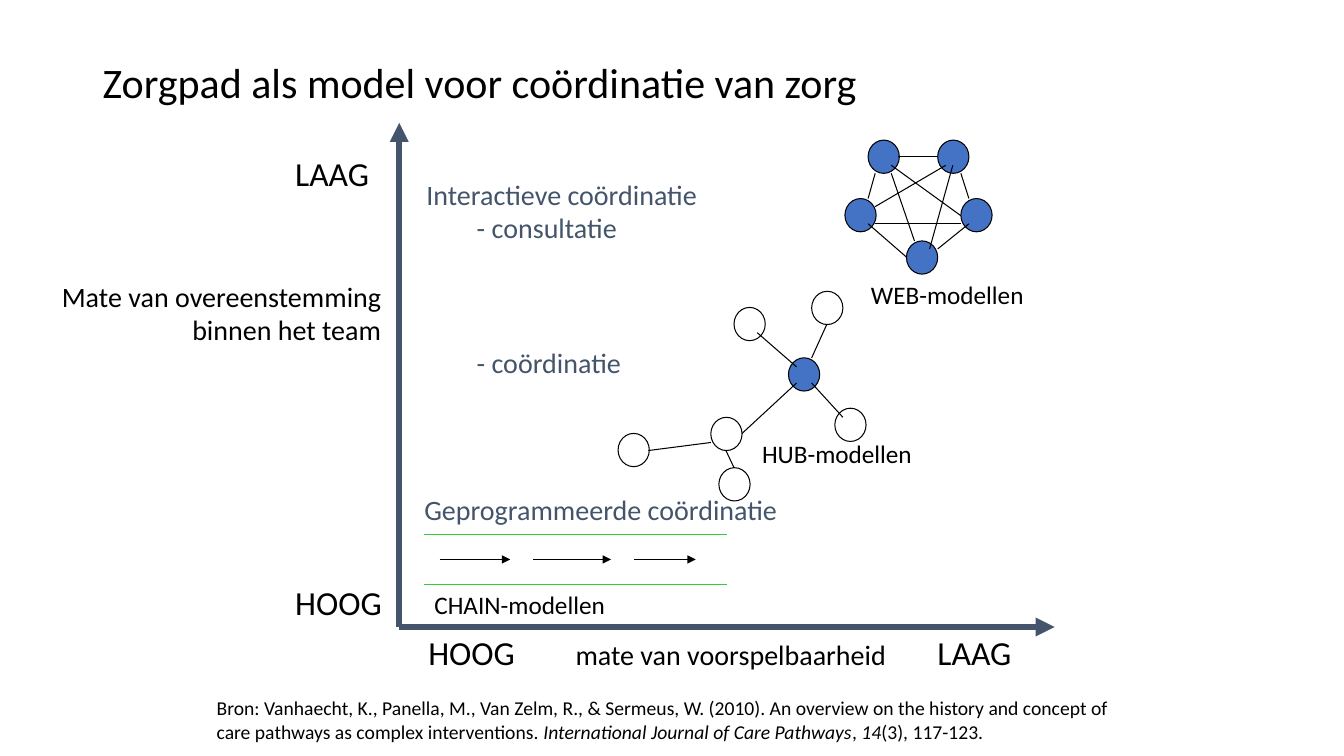
from lxml import etree
from pptx import Presentation
from pptx.dml.color import RGBColor
from pptx.enum.shapes import MSO_CONNECTOR, MSO_SHAPE
from pptx.enum.text import MSO_ANCHOR, MSO_AUTO_SIZE, PP_ALIGN
from pptx.oxml.ns import qn
from pptx.util import Inches, Pt

STRAIGHT = MSO_CONNECTOR.STRAIGHT
OVAL = MSO_SHAPE.OVAL
MIDDLE = MSO_ANCHOR.MIDDLE
FIT = MSO_AUTO_SIZE.SHAPE_TO_FIT_TEXT
LEFT, RIGHT = PP_ALIGN.LEFT, PP_ALIGN.RIGHT

BLACK = RGBColor(0x00, 0x00, 0x00)
SLATE = RGBColor(0x44, 0x54, 0x6A)
BLUE = RGBColor(0x44, 0x72, 0xC4)
GREEN = RGBColor(0x33, 0xCC, 0x33)


class Deck:
    """Style and current slide."""

    font = "Calibri"
    thin = 0.75
    node_w, node_h = 0.31, 0.33

    def __init__(self):
        self.prs = Presentation()
        self.prs.slide_width = Inches(13.33)
        self.prs.slide_height = Inches(7.5)
        self.s = self.prs.slides.add_slide(self.prs.slide_layouts[6])

    def style(self, r, size, color=BLACK, italic=None):
        r.font.name = self.font
        r.font.size = Pt(size)
        r.font.color.rgb = color
        r.font.italic = italic

    def box(self, x, y, w, h, wrap=False):
        sp = self.s.shapes.add_textbox(Inches(x), Inches(y), Inches(w), Inches(h))
        tf = sp.text_frame
        tf.word_wrap = wrap
        tf.auto_size = FIT
        return tf

    def text(self, x, y, w, h, text, size, color=BLACK, align=LEFT, wrap=False):
        tf = self.box(x, y, w, h, wrap)
        tf.text = text
        for p in tf.paragraphs:
            p.alignment = align
            for r in p.runs:
                self.style(r, size, color)
        return tf

    def rich(self, x, y, w, h, runs):
        """One wrapped paragraph of (text, size, italic) runs."""
        p = self.box(x, y, w, h, wrap=True).paragraphs[0]
        for text, size, italic in runs:
            r = p.add_run()
            r.text = text
            self.style(r, size, italic=italic)
        return p

    def tab_stops(self, p, *stops):
        tabs = etree.SubElement(p._p.get_or_add_pPr(), qn("a:tabLst"))
        for pos in stops:
            etree.SubElement(tabs, qn("a:tab"), pos=str(Inches(pos)), algn="l")

    def line(self, x1, y1, x2, y2, color=BLACK, width=thin, arrow=False):
        c = self.s.shapes.add_connector(
            STRAIGHT, Inches(x1), Inches(y1), Inches(x2), Inches(y2))
        c.line.color.rgb = color
        c.line.width = Pt(width)
        if arrow:
            etree.SubElement(c.line._get_or_add_ln(), qn("a:tailEnd"), type="triangle")
        etree.SubElement(c._element.spPr, qn("a:effectLst"))

    def node(self, x, y, fill=None):
        sp = self.s.shapes.add_shape(
            OVAL, Inches(x), Inches(y), Inches(self.node_w), Inches(self.node_h))
        sp.shadow.inherit = False
        if fill is None:
            sp.fill.background()
        else:
            sp.fill.solid()
            sp.fill.fore_color.rgb = fill
        sp.line.color.rgb = BLACK
        sp.line.width = Pt(self.thin)

    def network(self, nodes, links):
        for node in nodes:
            self.node(*node)
        for link in links:
            self.line(*link)


def main():
    d = Deck()

    # Title
    tf = d.text(0.92, 0.56, 10.37, 0.56,
                "Zorgpad als model voor coördinatie van zorg", 30, wrap=True)
    tf.vertical_anchor = MIDDLE
    tf.paragraphs[0].line_spacing = 0.9

    # Axes and their labels
    origin = (3.96, 6.22)
    for tip in ((3.96, 1.22), (10.46, 6.22)):
        d.line(*origin, *tip, SLATE, 4.5, arrow=True)
    p = d.rich(4.15, 6.22, 6.14, 0.5, [
        ("HOOG\t", 24, None),
        ("mate van voorspelbaarheid\t", 20, None),
        ("LAAG", 24, None),
    ])
    d.tab_stops(p, 1.46, 5.05)
    d.text(0.48, 2.72, 3.4, 0.77,
           "Mate van overeenstemming\nbinnen het team", 20, align=RIGHT)
    d.text(2.83, 5.72, 1.07, 0.5, "HOOG", 24)
    d.text(2.83, 1.47, 0.94, 0.5, "LAAG", 24)

    # Chain model
    for x1, x2 in ((4.36, 5.06), (5.29, 6.06), (6.29, 6.9)):
        d.line(x1, 5.55, x2, 5.55, arrow=True)
    for y in (5.3, 5.8):
        d.line(4.21, y, 7.21, y, GREEN)
    d.text(4.21, 5.8, 1.91, 0.4, "CHAIN-modellen", 18)

    # Hub model
    d.network(
        [(7.82, 3.55, BLUE), (7.28, 3.05), (8.05, 2.89), (8.28, 4.05),
         (7.05, 4.14), (7.13, 4.64), (6.13, 4.3)],
        [(7.05, 4.39, 6.43, 4.47), (7.28, 4.64, 7.2, 4.47),
         (7.36, 4.3, 7.9, 3.8), (7.51, 3.3, 7.9, 3.64),
         (8.05, 3.55, 8.2, 3.22), (8.05, 3.8, 8.36, 4.14)])
    d.text(7.46, 4.3, 1.7, 0.4, "HUB-modellen", 18)

    # Web model
    web = ((9.3, 1.39), (8.99, 2.39), (8.38, 1.97), (8.61, 1.39), (9.53, 1.97))
    d.network(
        [(x, y, BLUE) for x, y in web],
        [(8.91, 1.55, 9.3, 1.55), (9.53, 1.72, 9.61, 1.97),
         (9.61, 2.22, 9.3, 2.47), (8.61, 2.22, 8.99, 2.55),
         (8.61, 1.97, 8.68, 1.72), (8.84, 1.72, 9.07, 2.39),
         (9.22, 2.47, 9.45, 1.64), (8.68, 2.05, 9.38, 1.64),
         (8.68, 2.22, 9.53, 2.22), (8.84, 1.64, 9.53, 2.14)])
    d.text(8.54, 2.72, 1.73, 0.4, "WEB-modellen", 18)

    # Kinds of coordination
    d.text(4.11, 4.84, 3.74, 0.44, "Geprogrammeerde coördinatie", 20, SLATE)
    d.text(4.13, 3.38, 2.63, 0.44, "\t- coördinatie", 20, SLATE)
    d.text(4.13, 1.71, 2.92, 0.77,
           "Interactieve coördinatie\n\t- consultatie", 20, SLATE)

    # Reference
    d.rich(2.05, 6.86, 9.38, 0.57, [
        ("Bron: Vanhaecht, K., Panella, M., Van Zelm, R., & Sermeus, W. (2010). "
         "An overview on the history and concept of care pathways as complex "
         "interventions. ", 14, False),
        ("International Journal of Care Pathways", 14, True),
        (", ", 14, False),
        ("14", 14, True),
        ("(3), 117-123.", 14, False),
    ])

    d.prs.save("out.pptx")


if __name__ == "__main__":
    main()
